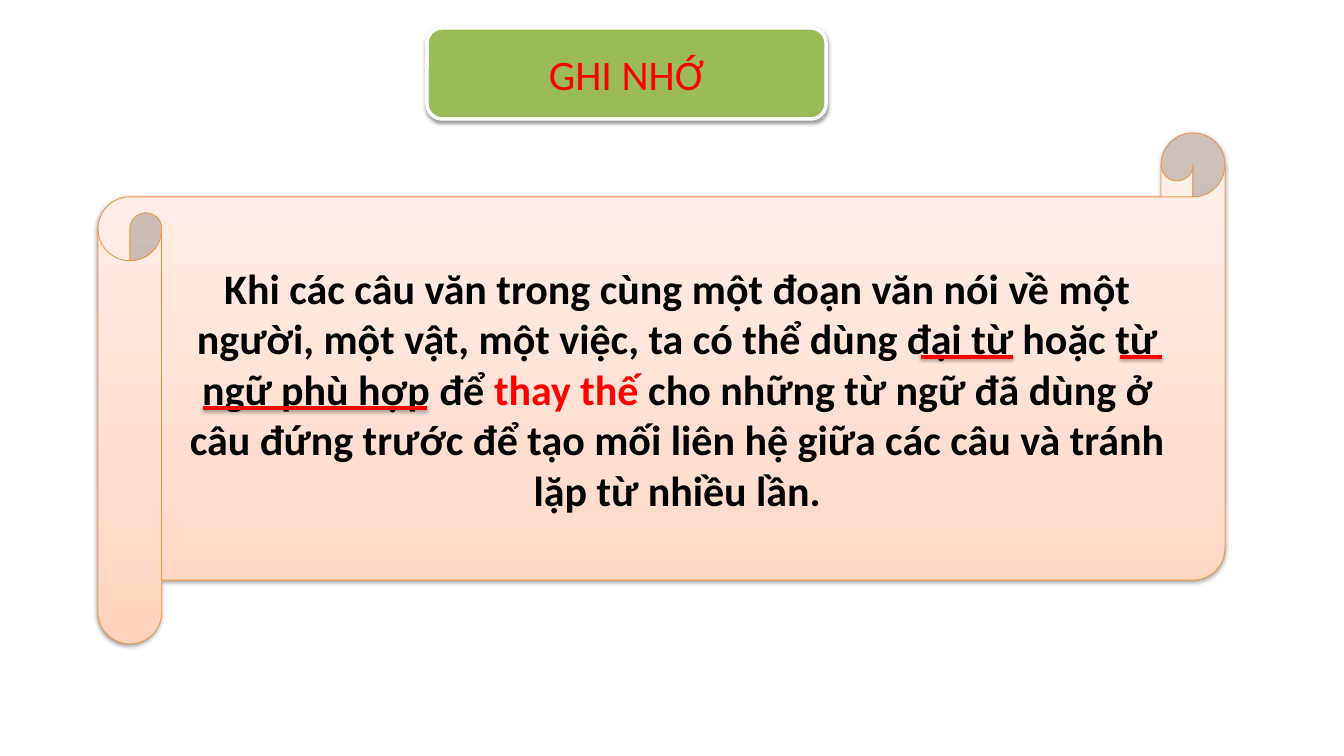
from lxml.etree import SubElement
from pptx import Presentation
from pptx.dml.color import RGBColor
from pptx.enum.shapes import MSO_CONNECTOR as Connector, MSO_SHAPE as Shape
from pptx.enum.text import MSO_ANCHOR as Anchor, PP_ALIGN as Align
from pptx.oxml.ns import qn
from pptx.util import Inches, Pt

BLACK, RED, WHITE = "000000", "FF0000", "FFFFFF"
GREEN, ORANGE = "9BBB59", "F69240"
PEACH = [(0, "FFD2BD"), (35, "FFDED0"), (100, "FFF2ED")]


def color(hex_code):
    return RGBColor.from_string(hex_code)


class Board:
    CELL = Inches(1) / 12
    FONT = "Calibri"
    SIZE = Pt(36)

    def __init__(self, deck):
        self.slide = deck.slides.add_slide(deck.slide_layouts[6])

    def grid(self, *cells):
        return [round(cell * self.CELL) for cell in cells]

    def outline(self, element, hex_code, width):
        element.line.color.rgb = color(hex_code)
        element.line.width = Pt(width)

    def shadow(self, effects, opacity, distance):
        outer = SubElement(effects, qn("a:outerShdw"), blurRad=str(Pt(3.1)),
                           dist=str(Pt(distance)), dir="5400000", rotWithShape="0")
        tint = SubElement(outer, qn("a:srgbClr"), val=BLACK)
        SubElement(tint, qn("a:alpha"), val=str(opacity * 1000))

    def gradient(self, panel, stops):
        panel.fill.gradient()
        panel.fill.gradient_angle = 90
        stop_list = panel.element.spPr.find(".//" + qn("a:gsLst"))
        for stop in list(stop_list):
            stop_list.remove(stop)
        for position, hex_code in stops:
            stop = SubElement(stop_list, qn("a:gs"), pos=str(position * 1000))
            SubElement(stop, qn("a:srgbClr"), val=hex_code)

    def panel(self, preset, cells, fill, line, width, runs, bold=False):
        panel = self.slide.shapes.add_shape(preset, *self.grid(*cells))
        if isinstance(fill, str):
            panel.fill.solid()
            panel.fill.fore_color.rgb = color(fill)
        else:
            self.gradient(panel, fill)
        self.outline(panel, line, width)
        panel.shadow.inherit = False
        self.shadow(panel.element.spPr.find(qn("a:effectLst")), 38, 1.6)
        self.add_text(panel.text_frame, runs, bold)

    def add_text(self, frame, runs, bold):
        frame.word_wrap = True
        frame.vertical_anchor = Anchor.MIDDLE
        paragraph = frame.paragraphs[0]
        paragraph.alignment = Align.CENTER
        for text, hex_code in runs:
            run = paragraph.add_run()
            run.text = text
            run.font.name = self.FONT
            run.font.size = self.SIZE
            run.font.bold = bold
            run.font.color.rgb = color(hex_code)

    def underline(self, start, end, row):
        stroke = self.slide.shapes.add_connector(
            Connector.STRAIGHT, *self.grid(start, row, end, row))
        self.outline(stroke, RED, 3)
        self.shadow(SubElement(stroke.element.spPr, qn("a:effectLst")), 35, 1.8)


def main():
    deck = Presentation()
    deck.slide_width, deck.slide_height = Inches(16), Inches(9)
    board = Board(deck)

    board.panel(Shape.ROUNDED_RECTANGLE, (61, 4, 57, 13), GREEN, WHITE, 3,
                [("GHI NHỚ", RED)])
    board.panel(Shape.HORIZONTAL_SCROLL, (14, 19, 161, 73), PEACH, ORANGE, 0.75, [
        ("Khi các câu văn trong cùng một đoạn văn nói về một người, một vật, "
         "một việc, ta có thể dùng đại từ hoặc từ ngữ phù hợp để ", BLACK),
        ("thay thế ", RED),
        ("cho những từ ngữ đã dùng ở câu đứng trước để tạo mối liên hệ giữa "
         "các câu và tránh lặp từ nhiều lần.", BLACK),
    ], bold=True)

    for start, end, row in [(131.6, 144.7, 51), (29, 61, 58.3), (160, 166, 51)]:
        board.underline(start, end, row)

    deck.save("out.pptx")


if __name__ == "__main__":
    main()
